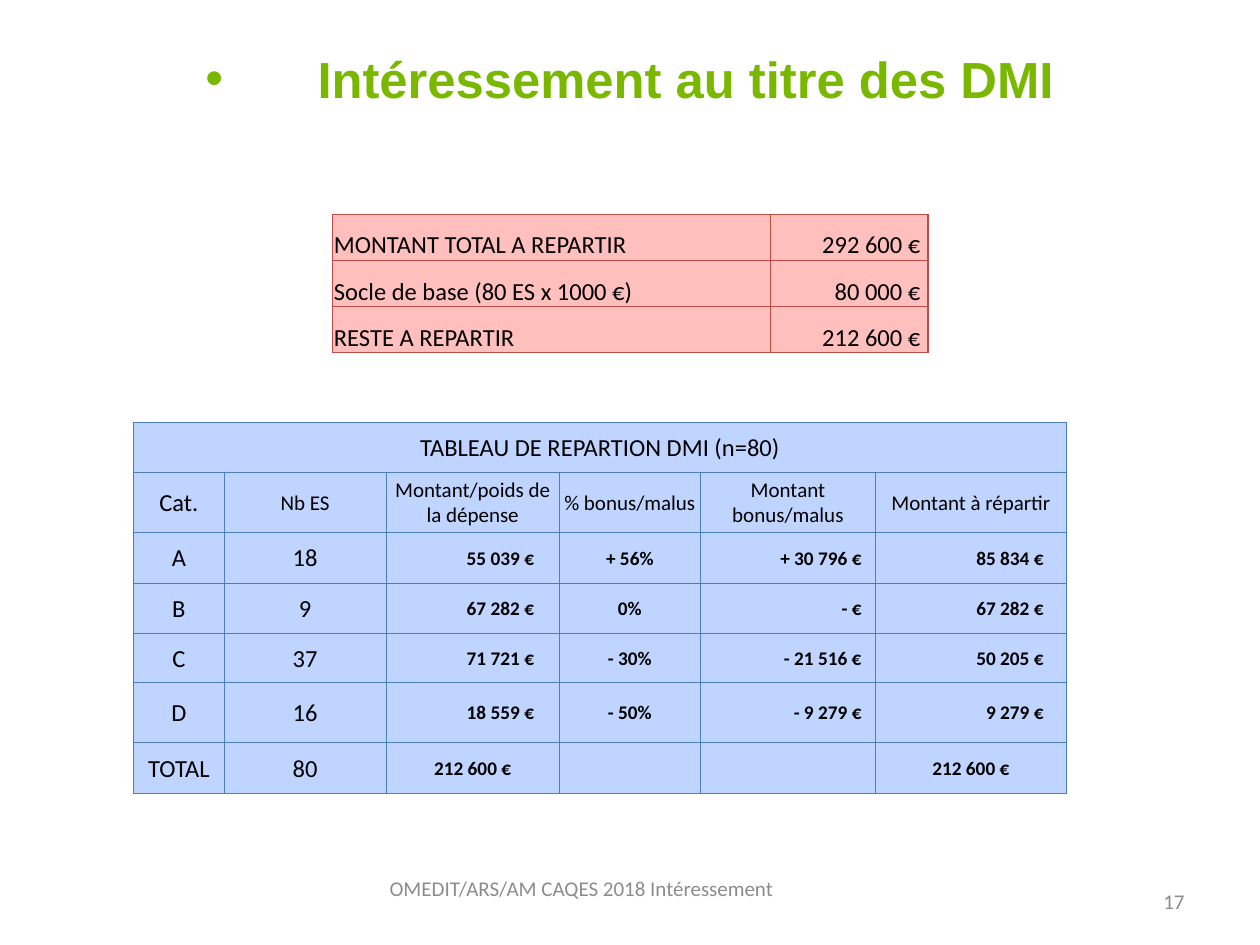
from dataclasses import dataclass

from pptx import Presentation
from pptx.dml.color import RGBColor
from pptx.enum.text import MSO_ANCHOR, PP_ALIGN
from pptx.oxml.ns import qn
from pptx.util import Inches, Pt
from lxml.etree import SubElement, Element


@dataclass(frozen=True)
class Theme:
    green: str = "7AB800"
    gray: str = "8C8C8C"
    black: str = "000000"
    blue_fill: str = "BFD4FF"
    blue_line: str = "4B7EBC"
    red_fill: str = "FFBFBD"
    red_line: str = "BF4C48"
    heading_font: str = "Arial"
    body_font: str = "Calibri"
    title_size: float = 29
    body_size: float = 14
    header_size: float = 12
    amount_size: float = 11
    border: float = 0.75


@dataclass(frozen=True)
class CellStyle:
    size: float
    bold: bool = False
    align: PP_ALIGN = PP_ALIGN.CENTER
    right: float = 0.1


class SlideBuilder:
    columns, rows = 100, 75

    def __init__(self, deck, theme):
        self.deck, self.theme = deck, theme
        self.slide = deck.slides.add_slide(deck.slide_layouts[5])

    def across(self, count):
        return round(self.deck.slide_width * count / self.columns)

    def down(self, count):
        return round(self.deck.slide_height * count / self.rows)

    def area(self, left, top, width, height):
        return self.across(left), self.down(top), self.across(width), self.down(height)

    def apply(self, target, values):
        for name, value in values.items():
            setattr(target, name, value)

    def add_text(self, frame, text, align, size, color, font, bold=False):
        para = frame.paragraphs[0]
        para.alignment = align
        span = para.add_run()
        span.text = text
        self.apply(span.font, {"size": Pt(size), "name": font, "bold": bold})
        span.font.color.rgb = RGBColor.from_string(color)

    def title(self, text, place, indent):
        box = self.slide.shapes.title
        self.apply(box, dict(zip(("left", "top", "width", "height"), self.area(*place))))
        self.apply(box.text_frame, {"vertical_anchor": MSO_ANCHOR.TOP, "word_wrap": True,
                                    "margin_top": self.down(0.8)})
        theme = self.theme
        properties = box.text_frame.paragraphs[0]._p.get_or_add_pPr()
        properties.set("marL", str(self.across(indent)))
        properties.set("indent", str(-self.across(indent)))
        SubElement(properties, qn("a:buFont"), typeface=theme.heading_font)
        SubElement(properties, qn("a:buChar"), char="•")
        self.add_text(box.text_frame, text, PP_ALIGN.CENTER, theme.title_size,
                      theme.green, theme.heading_font, True)

    def label(self, text, place, align, anchor):
        box = self.slide.shapes.add_textbox(*self.area(*place))
        self.apply(box.text_frame, {"word_wrap": True, "vertical_anchor": anchor,
                                    "margin_top": 0, "margin_bottom": 0})
        self.add_text(box.text_frame, text, align, self.theme.header_size,
                      self.theme.gray, self.theme.body_font)

    def border(self, cell, color):
        properties = cell._tc.get_or_add_tcPr()
        for position, side in enumerate(("lnL", "lnR", "lnT", "lnB")):
            line = Element(qn(f"a:{side}"), w=str(Pt(self.theme.border)))
            fill = SubElement(line, qn("a:solidFill"))
            SubElement(fill, qn("a:srgbClr"), val=color)
            properties.insert(position, line)

    def table(self, values, corner, widths, heights, fill, line, anchor, style_of):
        place = self.area(*corner, sum(widths), sum(heights))
        table = self.slide.shapes.add_table(len(heights), len(widths), *place).table
        self.apply(table, {"first_row": False, "horz_banding": False})
        for column, width in zip(table.columns, widths):
            column.width = self.across(width)
        for row, height in zip(table.rows, heights):
            row.height = self.down(height)
        for row_index, row in enumerate(values):
            for column_index, text in enumerate(row):
                cell = table.cell(row_index, column_index)
                style = style_of(row_index, column_index)
                self.apply(cell, {"vertical_anchor": anchor, "margin_left": self.across(0.1),
                                  "margin_right": self.across(style.right),
                                  "margin_top": self.down(0.1), "margin_bottom": 0})
                cell.fill.solid()
                cell.fill.fore_color.rgb = RGBColor.from_string(fill)
                self.border(cell, line)
                if text:
                    self.add_text(cell.text_frame, text, style.align, style.size,
                                  self.theme.black, self.theme.body_font, style.bold)
                else:
                    cell.text_frame.paragraphs[0].font.size = Pt(style.size)
        return table


def main():
    deck = Presentation()
    deck.slide_width, deck.slide_height = Inches(10), Inches(7.5)
    theme = Theme()
    page = SlideBuilder(deck, theme)

    page.title("Intéressement au titre des DMI", (5, 3, 90, 12.5), 8.9)
    page.label("17", (71.7, 69.5, 23.3, 4), PP_ALIGN.RIGHT, MSO_ANCHOR.MIDDLE)
    page.label("OMEDIT/ARS/AM CAQES 2018 Intéressement", (26.4, 69.5, 39.5, 4),
               PP_ALIGN.CENTER, MSO_ANCHOR.TOP)

    amount_margins = {2: 2, 4: 1.1, 5: 1.8}
    total_row = 6

    def category_style(row, column):
        if row == 0 or column == 0 or (row > 1 and column == 1):
            return CellStyle(theme.body_size)
        if row == 1:
            return CellStyle(theme.header_size)
        if row < total_row and column in amount_margins:
            return CellStyle(theme.amount_size, True, PP_ALIGN.RIGHT, amount_margins[column])
        return CellStyle(theme.amount_size, True)

    def summary_style(row, column):
        if column == 0:
            return CellStyle(theme.body_size, align=PP_ALIGN.LEFT)
        return CellStyle(theme.body_size, align=PP_ALIGN.RIGHT, right=0.6)

    categories = [
        ["TABLEAU DE REPARTION DMI (n=80)", "", "", "", "", ""],
        ["Cat.", "Nb ES", "Montant/poids de la dépense", "% bonus/malus",
         "Montant bonus/malus", "Montant à répartir"],
        ["A", "18", "55 039 €", "+ 56%", "+ 30 796 €", "85 834 €"],
        ["B", "9", "67 282 €", "0%", "- €", "67 282 €"],
        ["C", "37", "71 721 €", "- 30%", "- 21 516 €", "50 205 €"],
        ["D", "16", "18 559 €", "- 50%", "- 9 279 €", "9 279 €"],
        ["TOTAL", "80", "212 600 €", "", "", "212 600 €"],
    ]
    category_table = page.table(
        categories, (10.6, 33.55), (7.2, 12.85, 13.75, 11.2, 13.9, 15.15),
        (3.95, 4.75, 4.05, 3.95, 3.95, 4.75, 4.05),
        theme.blue_fill, theme.blue_line, MSO_ANCHOR.MIDDLE, category_style)
    category_table.cell(0, 0).merge(category_table.cell(0, 5))

    summary = [
        ["MONTANT TOTAL A REPARTIR", "292 600 €"],
        ["Socle de base (80 ES x 1000 €)", "80 000 €"],
        ["RESTE A REPARTIR", "212 600 €"],
    ]
    page.table(summary, (26.4, 17), (34.75, 12.5), (3.67,) * len(summary),
               theme.red_fill, theme.red_line, MSO_ANCHOR.BOTTOM, summary_style)

    deck.save("out.pptx")


if __name__ == "__main__":
    main()
